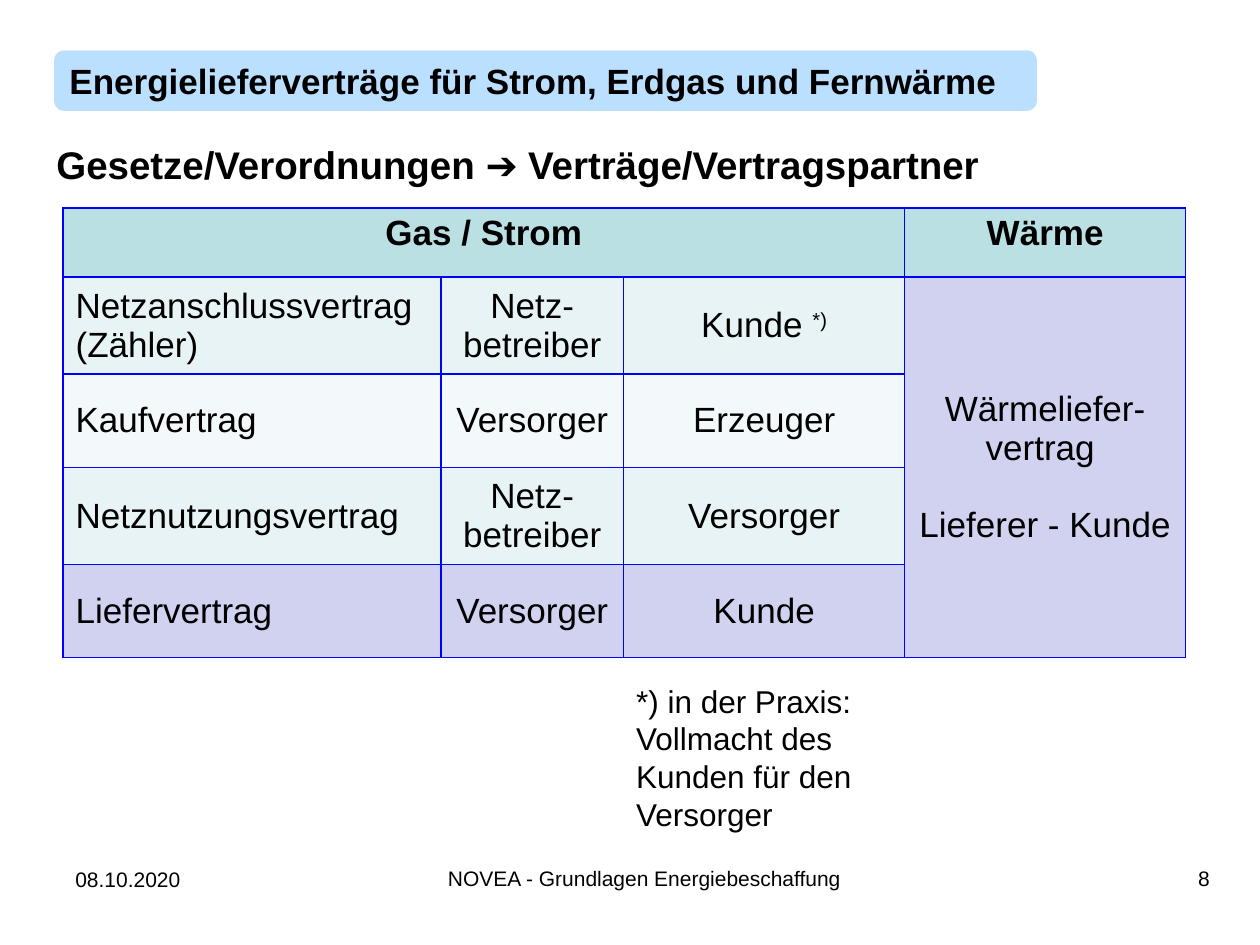
from lxml import etree
from pptx import Presentation
from pptx.dml.color import RGBColor
from pptx.enum import shapes, text
from pptx.oxml import ns
from pptx.util import Inches, Pt

BLACK = RGBColor(0x00, 0x00, 0x00)
TITLE_BLUE = RGBColor(0x05, 0x8E, 0xFF)
HEADER = RGBColor(0xBB, 0xE0, 0xE3)
BAND = RGBColor(0xE7, 0xF3, 0xF4)
LIGHT = RGBColor(0xF3, 0xF9, 0xFA)
LILAC = RGBColor(0xD1, 0xD1, 0xF0)
BORDER = RGBColor(0x00, 0x00, 0xFF)
LEFT, CENTER, RIGHT = text.PP_ALIGN.LEFT, text.PP_ALIGN.CENTER, text.PP_ALIGN.RIGHT

TITLE = "Energielieferverträge für Strom, Erdgas und Fernwärme"
TEXTS = [
    ("NOVEA - Grundlagen Energiebeschaffung", (1.77, 6.82, 6.69, 0.52), 12, False, CENTER),
    ("08.10.2020", (0.5, 6.83, 1.2, 0.52), 12, False, LEFT),
    ("8", (8.86, 6.82, 0.84, 0.52), 12, False, RIGHT),
    ("Gesetze/Verordnungen ➔ Verträge/Vertragspartner", (0.35, 1.07, 9.34, 0.47), 22, True, LEFT),
    ("*) in der Praxis: Vollmacht des Kunden für den Versorger",
     (4.95, 5.36, 2.36, 1.31), 18, False, LEFT),
]
COLS = [3, 1.45, 2.23, 2.23]
ROWS = [0.55, 0.77, 0.74, 0.77, 0.74]
HEADERS = {0: "Gas / Strom", 3: "Wärme"}
CONTRACTS = [
    (BAND, "Netzanschlussvertrag\n(Zähler)", "Netz-betreiber", "Kunde "),
    (LIGHT, "Kaufvertrag", "Versorger", "Erzeuger"),
    (BAND, "Netznutzungsvertrag", "Netz-betreiber", "Versorger"),
    (LILAC, "Liefervertrag", "Versorger", "Kunde"),
]
HEAT = "Wärmeliefer-vertrag \nLieferer - Kunde "


def write(tf, content, size, bold=False, align=LEFT):
    tf.word_wrap = True
    tf.text = content
    for p in tf.paragraphs:
        p.alignment = align
        p.font.name = "Arial"
        p.font.size = Pt(size)
        p.font.bold = bold
        p.font.color.rgb = BLACK


def fill_cell(cell, content, color, bold=False, align=CENTER, anchor=text.MSO_ANCHOR.MIDDLE):
    write(cell.text_frame, content, 20, bold, align)
    cell.vertical_anchor = anchor
    cell.fill.solid()
    cell.fill.fore_color.rgb = color


def add_borders(cell):
    pr = cell._tc.get_or_add_tcPr()
    for i, side in enumerate(("lnL", "lnR", "lnT", "lnB")):
        ln = etree.Element(ns.qn(f"a:{side}"), w=str(Pt(1)))
        solid = etree.SubElement(ln, ns.qn("a:solidFill"))
        etree.SubElement(solid, ns.qn("a:srgbClr"), val=str(BORDER))
        pr.insert(i, ln)


def add_title(s):
    sp = s.shapes.add_shape(shapes.MSO_SHAPE.ROUNDED_RECTANGLE,
                            Inches(0.43), Inches(0.4), Inches(7.8), Inches(0.48))
    sp.shadow.inherit = False
    sp.line.fill.background()
    sp.fill.solid()
    sp.fill.fore_color.rgb = TITLE_BLUE
    color = sp.fill._xPr.find(".//" + ns.qn("a:srgbClr"))
    etree.SubElement(color, ns.qn("a:alpha"), val="27000")
    write(sp.text_frame, TITLE, 20, True)


def add_contracts(s):
    table = s.shapes.add_table(len(ROWS), len(COLS), Inches(0.5), Inches(1.65),
                               Inches(sum(COLS)), Inches(sum(ROWS))).table
    for col, width in zip(table.columns, COLS):
        col.width = Inches(width)
    for row, height in zip(table.rows, ROWS):
        row.height = Inches(height)
    table.cell(0, 0).merge(table.cell(0, 2))
    table.cell(1, 3).merge(table.cell(4, 3))

    for c, content in HEADERS.items():
        fill_cell(table.cell(0, c), content, HEADER, True, anchor=text.MSO_ANCHOR.TOP)
    for r, (color, *contents) in enumerate(CONTRACTS, 1):
        for c, content in enumerate(contents):
            fill_cell(table.cell(r, c), content, color, align=CENTER if c else LEFT)
    mark = table.cell(1, 2).text_frame.paragraphs[0].add_run()
    mark.text = "*)"
    mark.font._element.set("baseline", "30000")

    heat = table.cell(1, 3)
    fill_cell(heat, HEAT, LILAC)
    heat.text_frame.paragraphs[1].space_before = Pt(22)
    for cell in table.iter_cells():
        add_borders(cell)


def main():
    prs = Presentation()
    prs.slide_width, prs.slide_height = Inches(10), Inches(7.5)
    s = prs.slides.add_slide(prs.slide_layouts[6])
    add_title(s)
    for content, box, size, bold, align in TEXTS:
        tb = s.shapes.add_textbox(*map(Inches, box))
        write(tb.text_frame, content, size, bold, align)
    add_contracts(s)
    prs.save("out.pptx")


if __name__ == "__main__":
    main()
